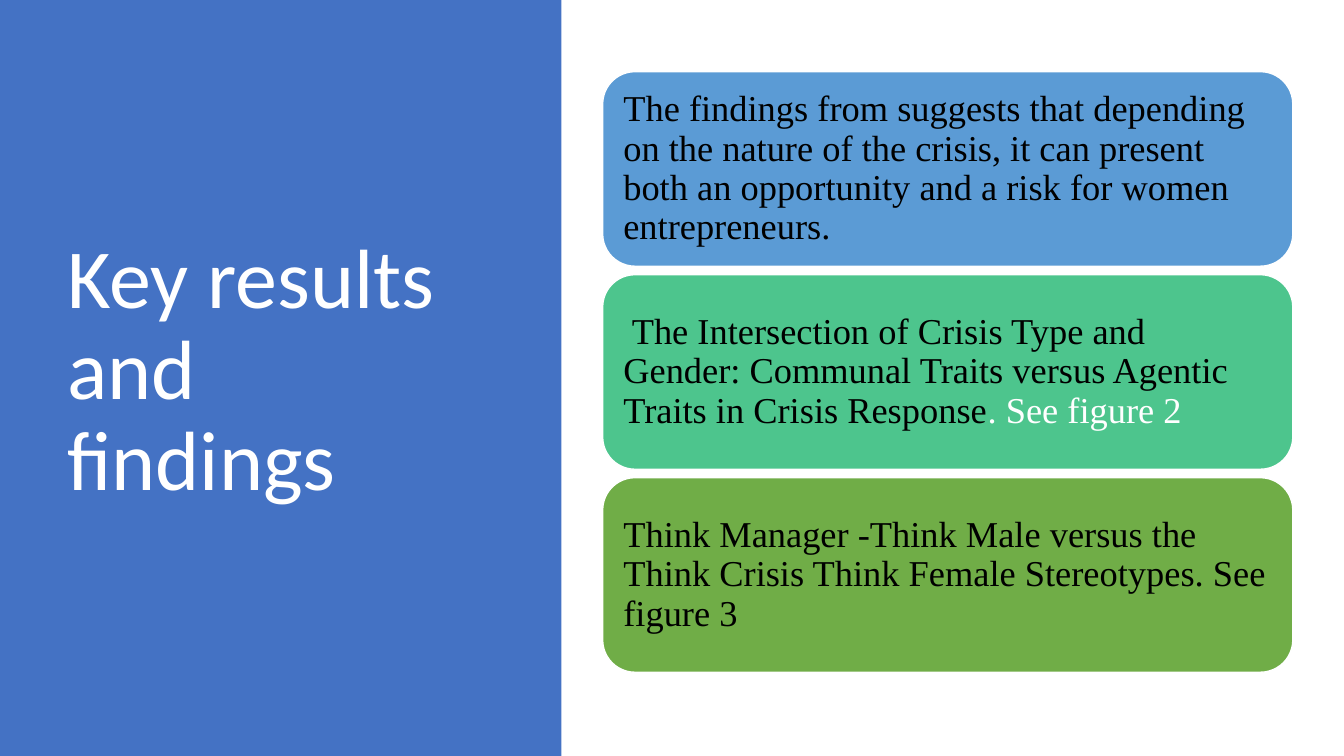
"""Build the slide on key results and findings."""
from pptx import Presentation
from pptx.dml.color import RGBColor
from pptx.enum.shapes import MSO_SHAPE
from pptx.enum.text import MSO_ANCHOR, PP_ALIGN
from pptx.util import Pt

COLOURS = {
    "panel": "4472C4",
    "blue": "5B9BD5",
    "mint": "4DC58D",
    "green": "70AD47",
    "white": "FFFFFF",
    "black": "000000",
}
CARD_LEFT, CARD_TOP, CARD_WIDTH, CARD_HEIGHT = 430.5, 51.2, 493, 139
CARD_PITCH = 145
CARDS = [
    ("blue", [("The findings from suggests that depending on the nature of the crisis, "
               "it can present both an opportunity and a risk for women entrepreneurs.", "black")]),
    ("mint", [(" The Intersection of Crisis Type and Gender: Communal Traits versus "
               "Agentic Traits in Crisis Response", "black"),
              (". See figure 2", "white")]),
    ("green", [("Think Manager -Think Male versus the Think Crisis Think Female "
                "Stereotypes. See figure 3", "black")]),
]


class SlideBuilder:
    """Hold the text style and the current slide."""

    title_font, title_size = "Calibri", 60
    card_font, card_size = "Times New Roman", 26
    card_inset = 8
    line_spacing = 0.9

    def __init__(self, page):
        self.page = page

    def colour(self, name):
        return RGBColor.from_string(COLOURS[name])

    def shape(self, kind, left, top, width, height, fill):
        box = self.page.shapes.add_shape(kind, Pt(left), Pt(top), Pt(width), Pt(height))
        box.shadow.inherit = False
        box.fill.solid()
        box.fill.fore_color.rgb = self.colour(fill)
        box.line.fill.background()
        return box

    def add_text(self, box, spans, font, size):
        frame = box.text_frame
        frame.word_wrap = True
        frame.vertical_anchor = MSO_ANCHOR.MIDDLE
        para = frame.paragraphs[0]
        para.alignment = PP_ALIGN.LEFT
        para.line_spacing = self.line_spacing
        for text, colour in spans:
            span = para.add_run()
            span.text = text
            span.font.name = font
            span.font.size = Pt(size)
            span.font.color.rgb = self.colour(colour)

    def panel(self, left, top, width, height, fill):
        self.shape(MSO_SHAPE.RECTANGLE, left, top, width, height, fill)

    def title(self, left, top, width, height, text):
        box = self.page.shapes.add_textbox(Pt(left), Pt(top), Pt(width), Pt(height))
        self.add_text(box, [(text, "white")], self.title_font, self.title_size)

    def card(self, left, top, width, height, fill, spans):
        box = self.shape(MSO_SHAPE.ROUNDED_RECTANGLE, left, top, width, height, fill)
        box.line.color.rgb = self.colour("white")
        box.line.width = Pt(1)
        frame = box.text_frame
        frame.margin_left = frame.margin_right = Pt(self.card_inset)
        frame.margin_top = frame.margin_bottom = Pt(self.card_inset)
        self.add_text(box, spans, self.card_font, self.card_size)


def main():
    deck = Presentation()
    deck.slide_width, deck.slide_height = Pt(960), Pt(540)
    builder = SlideBuilder(deck.slides.add_slide(deck.slide_layouts[6]))
    builder.panel(0, 0, 401, 540, "panel")
    builder.title(41, 49, 299.5, 433.5, "Key results and findings")
    for index, (fill, spans) in enumerate(CARDS):
        top = CARD_TOP + index * CARD_PITCH
        builder.card(CARD_LEFT, top, CARD_WIDTH, CARD_HEIGHT, fill, spans)
    deck.save("out.pptx")


if __name__ == "__main__":
    main()
